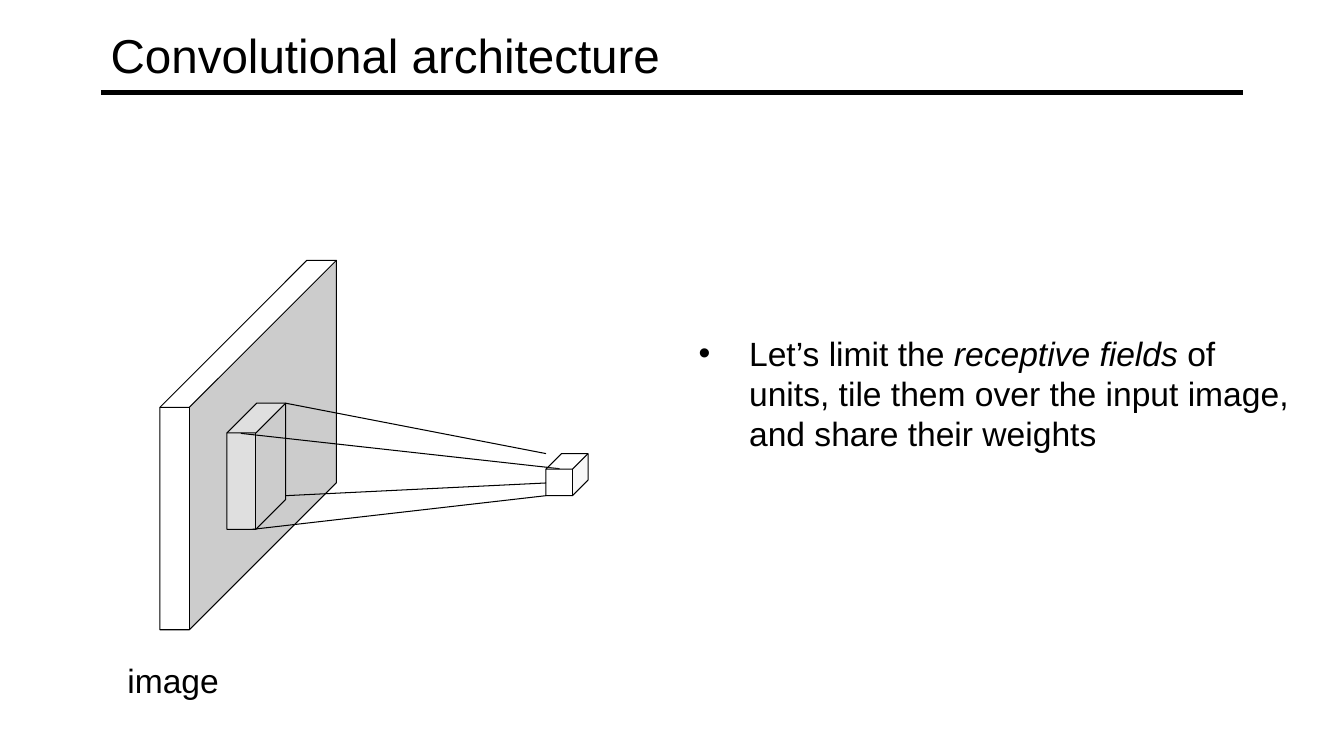
from lxml import etree
from pptx import Presentation
from pptx.dml.color import RGBColor
from pptx.enum.shapes import MSO_CONNECTOR as CONN, MSO_SHAPE as SHAPE
from pptx.enum.text import MSO_ANCHOR as ANCHOR
from pptx.oxml.ns import qn
from pptx.util import Cm, Pt

BLACK = RGBColor(0x00, 0x00, 0x00)
WHITE = RGBColor(0xFF, 0xFF, 0xFF)
FONT = "Arial"


def add_line(slide, start, end, width=0.75):
    ln = slide.shapes.add_connector(CONN.STRAIGHT, *map(Cm, start + end))
    ln.line.color.rgb = BLACK
    ln.line.width = Pt(width)
    etree.SubElement(ln._element.spPr, qn("a:effectLst"))


def add_cube(slide, box, depth, opacity=100):
    sp = slide.shapes.add_shape(SHAPE.CUBE, *map(Cm, box))
    sp.shadow.inherit = False
    sp.adjustments[0] = depth
    sp.fill.solid()
    sp.fill.fore_color.rgb = WHITE
    sp.line.color.rgb = BLACK
    sp.line.width = Pt(0.75)
    if opacity < 100:
        color = sp._element.spPr.find(qn("a:solidFill"))[0]
        etree.SubElement(color, qn("a:alpha"), val=str(opacity * 1000))


def add_text(slide, box, runs, size, **frame):
    """Runs are (text, italic) pairs; frame holds text frame settings."""
    tf = slide.shapes.add_textbox(*map(Cm, box)).text_frame
    for name, value in {"word_wrap": True, **frame}.items():
        setattr(tf, name, value)
    p = tf.paragraphs[0]
    for text, italic in runs:
        r = p.add_run()
        r.text = text
        style = {"name": FONT, "size": Pt(size), "italic": italic}
        for name, value in style.items():
            setattr(r.font, name, value)
        r.font.color.rgb = BLACK
    return p


def add_bullet(p, indent):
    pPr = p._p.get_or_add_pPr()
    pPr.set("marL", str(Cm(indent)))
    pPr.set("indent", str(-Cm(indent)))
    p.space_before = Pt(4.8)
    etree.SubElement(pPr, qn("a:buFont"), typeface=FONT)
    etree.SubElement(pPr, qn("a:buChar"), char="•")


def main():
    prs = Presentation()
    prs.slide_width, prs.slide_height = Cm(33.87), Cm(19.05)
    s = prs.slides.add_slide(prs.slide_layouts[6])

    # Title and rule
    add_line(s, (2.54, 2.33), (31.33, 2.33), 3)
    add_text(s, (2.54, 0.21, 28.79, 2.33),
             [("Convolutional architecture", False)], 34,
             vertical_anchor=ANCHOR.MIDDLE)

    # Image slab and receptive field
    add_cube(s, (4.03, 6.56, 4.45, 9.31), 0.833)
    add_cube(s, (5.72, 10.16, 1.48, 3.18), 0.507, 39)

    # Projection from the receptive field to the unit
    for start, end in [
        ((7.2, 10.16), (13.76, 11.43)),
        ((6.07, 10.92), (14.1, 11.81)),
        ((6.35, 13.34), (13.76, 12.49)),
        ((7.2, 12.49), (13.76, 12.17)),
    ]:
        add_line(s, start, end)
    add_cube(s, (13.76, 11.43, 1.06, 1.06), 0.369, 13)

    # Label and explanation
    add_text(s, (2.96, 16.51, 2.84, 1.27), [("image", False)], 24,
             word_wrap=False)
    p = add_text(s, (17.36, 8.26, 15.66, 6.77), [
        ("Let’s limit the ", False),
        ("receptive fields ", True),
        ("of units, tile them over the input image, "
         "and share their weights", False),
    ], 24)
    add_bullet(p, 1.27)

    prs.save("out.pptx")


if __name__ == "__main__":
    main()
